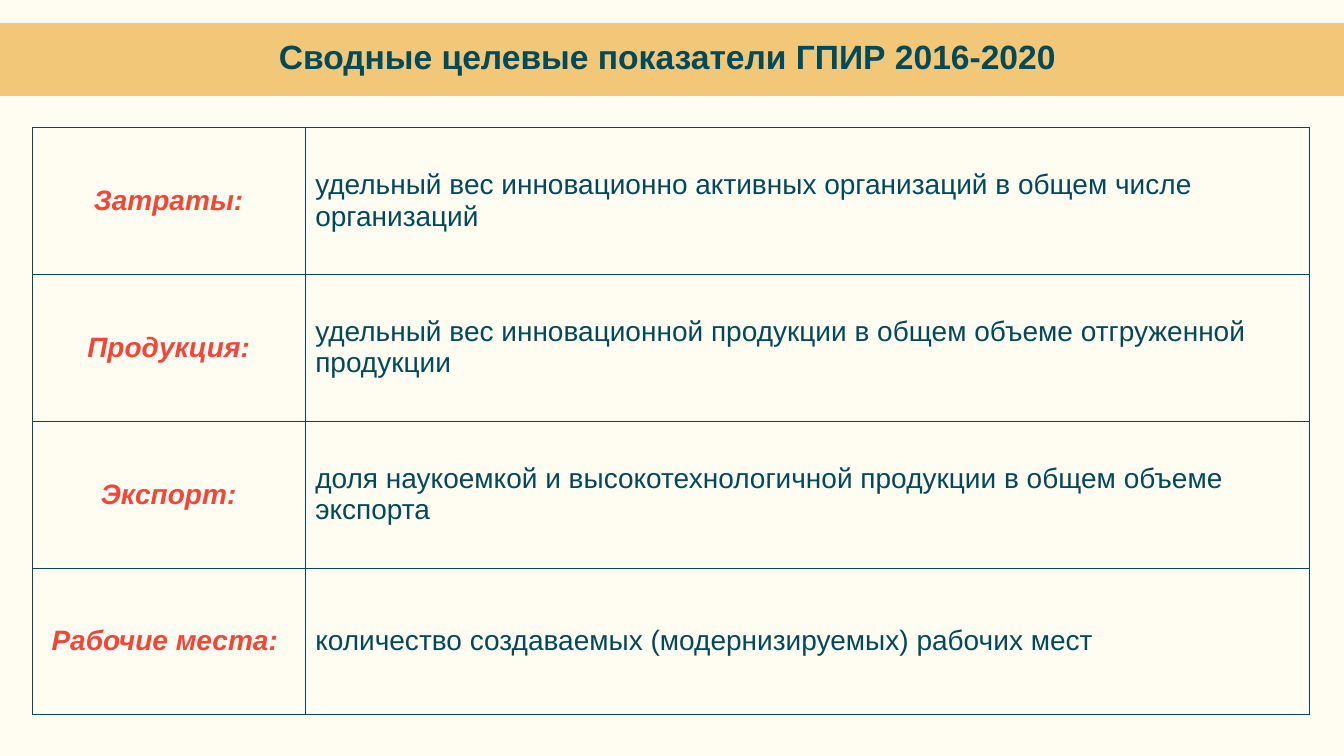
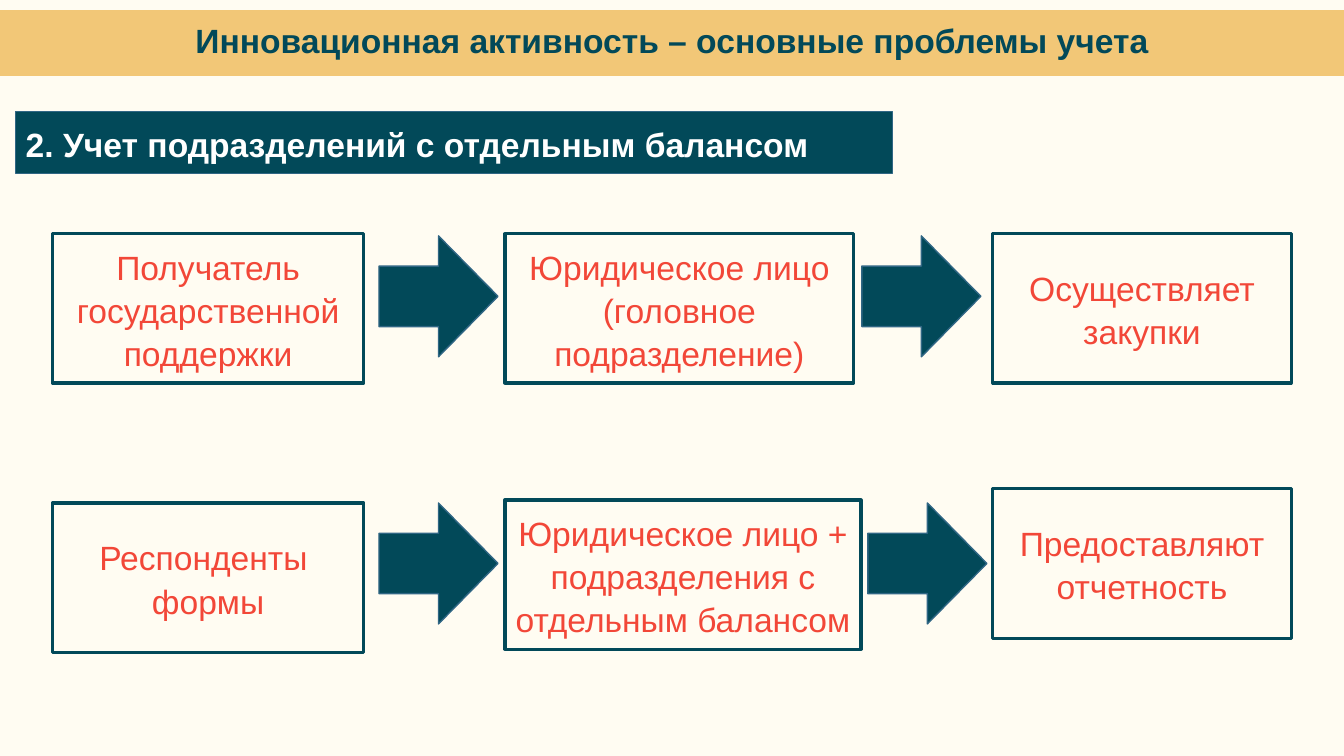
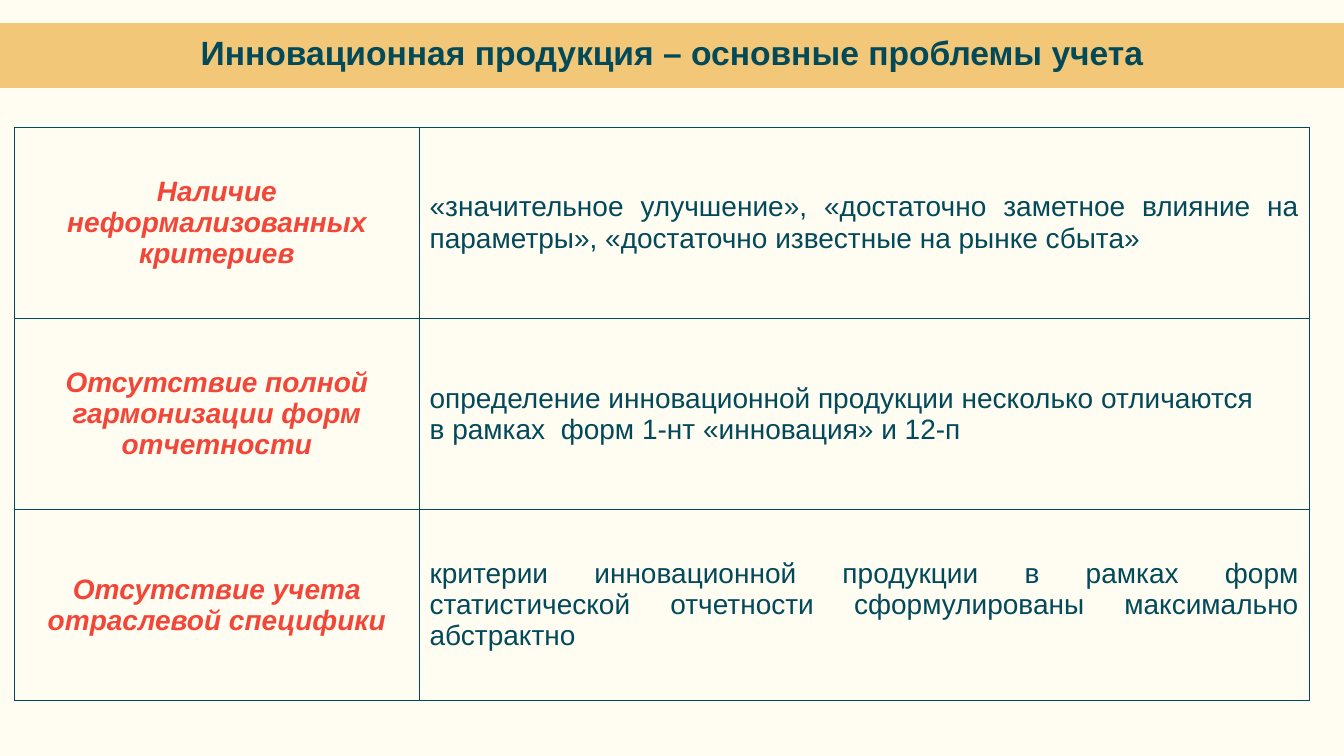
"""Builds three slides on innovation indicators and the problems of recording them."""

from dataclasses import dataclass

from lxml.etree import SubElement
from pptx import Presentation
from pptx.dml.color import RGBColor
from pptx.enum.shapes import MSO_SHAPE
from pptx.enum.text import MSO_ANCHOR, PP_ALIGN
from pptx.oxml.ns import qn
from pptx.util import Pt


@dataclass(frozen=True)
class Theme:
    cream: str = "FFFCF2"
    sand: str = "F2C777"
    teal: str = "024959"
    steel: str = "306684"
    red: str = "F24738"
    white: str = "FFFFFF"
    font: str = "Arial"
    large: int = 24
    medium: int = 20
    thick_line: float = 2.25
    thin_line: float = 1
    table_line: float = 0.25


theme = Theme()


def write(text_frame, text, color, size=theme.large, bold=False, italic=False,
          align=PP_ALIGN.LEFT, spacing=None):
    """Write one paragraph per line of text in the given format."""
    text_frame.word_wrap = True
    for index, line in enumerate(text.split("\n")):
        paragraph = text_frame.add_paragraph() if index else text_frame.paragraphs[0]
        paragraph.text = line
        paragraph.alignment = align
        paragraph.line_spacing = spacing
        for run in paragraph.runs:
            run.font.name = theme.font
            run.font.size = Pt(size)
            run.font.bold = bold
            run.font.italic = italic
            run.font.color.rgb = RGBColor.from_string(color)


def add_block(slide, preset, position, fill, line, line_width):
    """Add a preset shape at (left, top, width, height) in points."""
    shape = slide.shapes.add_shape(preset, *map(Pt, position))
    shape.shadow.inherit = False
    shape.fill.solid()
    shape.fill.fore_color.rgb = RGBColor.from_string(fill)
    shape.line.color.rgb = RGBColor.from_string(line)
    shape.line.width = Pt(line_width)
    shape.text_frame.vertical_anchor = MSO_ANCHOR.MIDDLE
    return shape


presentation = Presentation()
presentation.slide_width = Pt(960)
presentation.slide_height = Pt(540)

titles = [
    ("Сводные целевые показатели ГПИР 2016-2020 ", 17.3, 50.4),
    ("Инновационная активность – основные проблемы учета", 8.6, 44.6),
    ("Инновационная продукция – основные проблемы учета", 17.3, 44.6),
]
slides = []
for title, top, height in titles:
    slide = presentation.slides.add_slide(presentation.slide_layouts[6])
    slide.background.fill.solid()
    slide.background.fill.fore_color.rgb = RGBColor.from_string(theme.cream)
    band = add_block(slide, MSO_SHAPE.RECTANGLE, (0, top, 960, height),
                     theme.sand, theme.sand, theme.thick_line)
    write(band.text_frame, title, theme.teal, bold=True,
          align=PP_ALIGN.CENTER, spacing=Pt(24))
    slides.append(slide)
indicators_slide, activity_slide, products_slide = slides

indicators = [
    ("Затраты:", "удельный вес инновационно активных организаций в общем числе организаций"),
    ("Продукция:", "удельный вес инновационной продукции в общем объеме отгруженной продукции"),
    ("Экспорт:", "доля наукоемкой и высокотехнологичной продукции в общем объеме экспорта"),
    ("Рабочие места: ", "количество создаваемых (модернизируемых) рабочих мест"),
]
problems = [
    ("Наличие неформализованных критериев",
     "«значительное улучшение», «достаточно заметное влияние на параметры», "
     "«достаточно известные на рынке сбыта»"),
    ("Отсутствие полной гармонизации форм отчетности",
     "определение инновационной продукции несколько отличаются\n"
     "в рамках  форм 1-нт «инновация» и 12-п"),
    ("Отсутствие учета отраслевой специфики",
     "критерии инновационной продукции в рамках форм статистической отчетности "
     "сформулированы максимально абстрактно"),
]
tables = [
    (indicators_slide, indicators, 23, (195, 717), 104.9, PP_ALIGN.LEFT),
    (products_slide, problems, 10.2, (289.5, 635.3), 136.5, PP_ALIGN.JUSTIFY),
]
for slide, rows, left, column_widths, row_height, body_align in tables:
    table = slide.shapes.add_table(
        len(rows), 2, Pt(left), Pt(90.9),
        Pt(sum(column_widths)), Pt(row_height * len(rows))).table
    table.first_row = False
    table.horz_banding = False
    for column, width in zip(table.columns, column_widths):
        column.width = Pt(width)
    for row, (label, description) in zip(table.rows, rows):
        row.height = Pt(row_height)
        label_cell, description_cell = row.cells
        write(label_cell.text_frame, label, theme.red, size=theme.medium,
              bold=True, italic=True, align=PP_ALIGN.CENTER)
        write(description_cell.text_frame, description, theme.teal,
              size=theme.medium, align=body_align)
        for cell in row.cells:
            cell.vertical_anchor = MSO_ANCHOR.MIDDLE
            properties = cell._tc.get_or_add_tcPr()
            for side in ("a:lnL", "a:lnR", "a:lnT", "a:lnB"):
                border = SubElement(properties, qn(side), w=str(Pt(theme.table_line)))
                border_fill = SubElement(border, qn("a:solidFill"))
                SubElement(border_fill, qn("a:srgbClr"), val=theme.teal)
            cell.fill.background()

section = add_block(activity_slide, MSO_SHAPE.RECTANGLE, (11.3, 79.8, 626.3, 44),
                    theme.teal, theme.steel, theme.thin_line)
write(section.text_frame, "2. Учет подразделений с отдельным балансом",
      theme.white, bold=True, spacing=1.07)

steps = [
    ("Получатель государственной поддержки", 37.4, 167, 222.5),
    ("Юридическое лицо (головное подразделение)", 360.7, 167, 249.1),
    ("Осуществляет закупки", 709.2, 167, 213.1),
    ("Респонденты \vформы", 37.4, 359.3, 222.5),
    ("Юридическое лицо + подразделения с отдельным балансом", 360.7, 357.1, 254.3),
    ("Предоставляют отчетность", 709.2, 349.2, 213.1),
]
for text, left, top, width in steps:
    box = add_block(activity_slide, MSO_SHAPE.RECTANGLE, (left, top, width, 106.6),
                    theme.cream, theme.teal, theme.thick_line)
    write(box.text_frame, text, theme.red, align=PP_ALIGN.CENTER, spacing=1.07)

for left, top in [(270.7, 168.5), (615.6, 168.5), (270.7, 359.3), (619.9, 359.3)]:
    add_block(activity_slide, MSO_SHAPE.RIGHT_ARROW, (left, top, 85, 86.4),
              theme.teal, theme.steel, theme.thin_line)

presentation.save("out.pptx")
